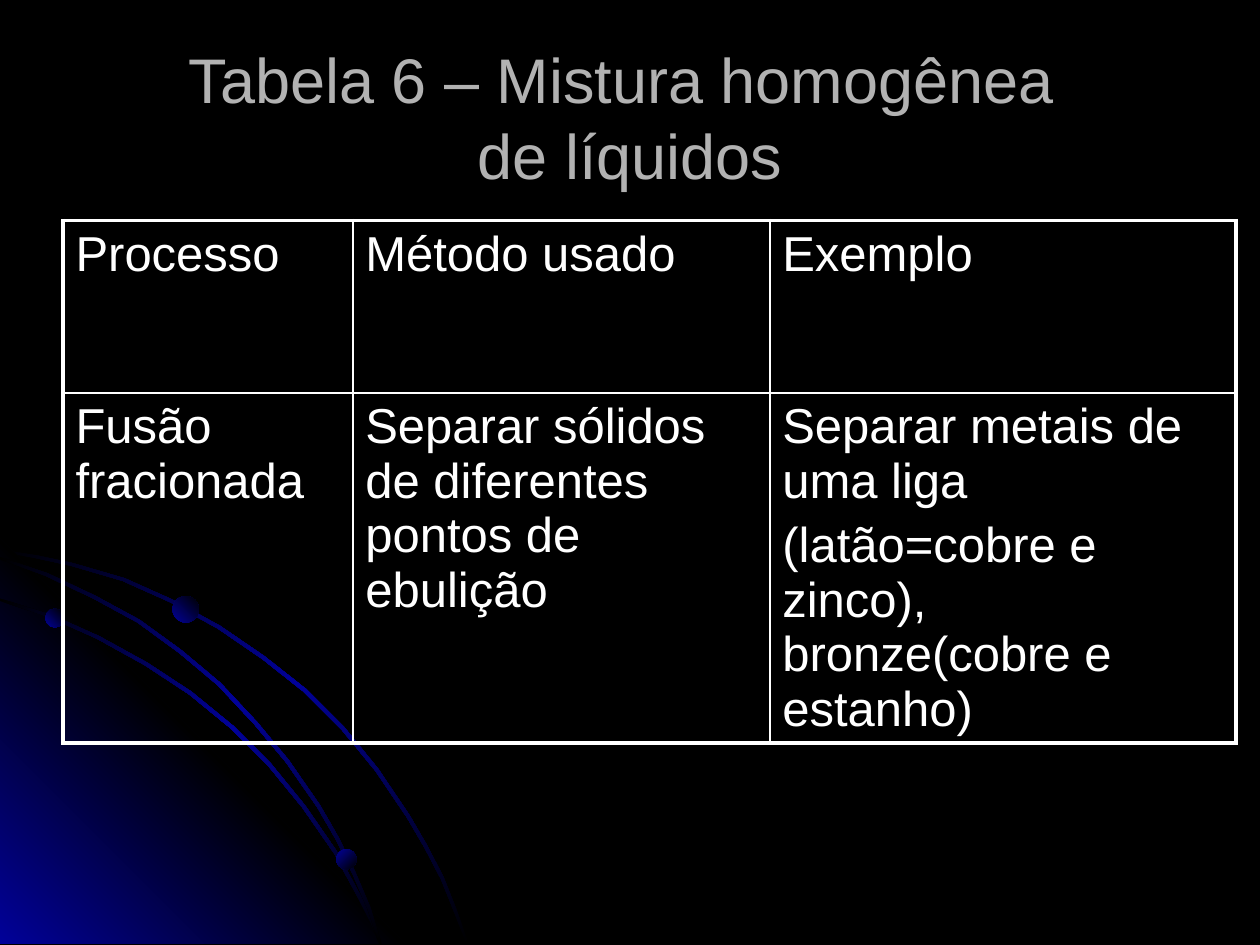
from copy import deepcopy

from lxml.etree import SubElement
from pptx import Presentation
from pptx.dml.color import RGBColor
from pptx.enum.shapes import MSO_SHAPE as Shape
from pptx.enum.text import MSO_ANCHOR as Anchor, MSO_AUTO_SIZE as AutoSize, PP_ALIGN as Align
from pptx.oxml.ns import qn
from pptx.util import Pt

FONT = "Arial"
BLACK, BLUE, WHITE, GREY = "000000", "010199", "FFFFFF", "B2B2B2"
UNIT = Pt(0.72)
BOTTOM = 749
ARCS = [
    [(0, 438), (28, 443), (56, 449), (97, 461), (135, 478), (173, 499), (208, 523),
     (241, 549), (271, 579), (298, 612), (323, 649), (337, 673), (350, 698),
     (360, 723), (370, BOTTOM)],
    [(0, 477), (39, 490), (77, 507), (115, 528), (150, 551), (183, 578), (213, 608),
     (240, 641), (265, 677), (285, 714), (294, 732), (301, BOTTOM)],
    [(0, 444), (36, 457), (74, 475), (109, 494), (142, 518), (173, 544), (202, 575),
     (227, 605), (252, 641), (267, 667), (280, 694), (292, 722), (301, BOTTOM)],
]
GLOW = [(0, 427), (322, BOTTOM), (0, BOTTOM)]
PLANETS = [(25.9, 347.8, 10.8, 45), (192.2, 485.3, 11.5, 315), (98.6, 340.6, 15.1, 45)]
COLUMNS = [165.6, 238.3, 266.4]
ROWS = [98.6, 178.6]
CELLS = [
    ["Processo", "Método usado", "Exemplo"],
    ["Fusão fracionada", "Separar sólidos de diferentes pontos de ebulição",
     "Separar metais de uma liga\n(latão=cobre e zinco), bronze(cobre e estanho)"],
]


def color(value):
    return RGBColor.from_string(value)


def format_runs(paragraph, size, value):
    for run in paragraph.runs:
        run.font.name = FONT
        run.font.size = Pt(size)
        run.font.color.rgb = color(value)


def paint_gradient(shape, colors, angle):
    shape.shadow.inherit = False
    shape.line.fill.background()
    shape.fill.gradient()
    shape.fill.gradient_angle = angle
    stops = shape.fill.gradient_stops
    if len(colors) == 3:
        first = shape.element.spPr.find(".//" + qn("a:gs"))
        first.addnext(deepcopy(first))
        stops = shape.fill.gradient_stops
    for index, (stop, value) in enumerate(zip(stops, colors)):
        stop.position = index / (len(colors) - 1)
        stop.color.rgb = color(value)


def add_outline(slide, points, colors, angle):
    builder = slide.shapes.build_freeform(*points[0], scale=UNIT)
    builder.add_line_segments(points[1:], close=True)
    paint_gradient(builder.convert_to_shape(), colors, angle)


def add_arc(slide, lower):
    upper = [(x + 2 if x else x, y - 2 if y < BOTTOM else y) for x, y in lower]
    add_outline(slide, lower + upper[::-1], [BLACK, BLUE, BLACK], 315)


def add_planet(slide, left, top, size, angle):
    planet = slide.shapes.add_shape(Shape.OVAL, Pt(left), Pt(top), Pt(size), Pt(size))
    paint_gradient(planet, [BLUE, BLACK], angle)


def set_title(slide, text):
    title = slide.shapes.title
    title.left, title.top, title.width, title.height = Pt(36), Pt(21.6), Pt(648), Pt(90)
    frame = title.text_frame
    frame.text = text
    frame.auto_size = AutoSize.NONE
    frame.vertical_anchor = Anchor.MIDDLE
    frame.paragraphs[0].alignment = Align.CENTER
    format_runs(frame.paragraphs[0], 36, GREY)


def set_borders(cell, widths):
    properties = cell._tc.get_or_add_tcPr()
    for index, (side, width) in enumerate(widths.items()):
        line = properties.makeelement(qn("a:ln" + side), {"w": str(Pt(width))})
        fill = SubElement(line, qn("a:solidFill"))
        SubElement(fill, qn("a:srgbClr"), val=WHITE)
        properties.insert(index, line)


def add_table(slide):
    frame = slide.shapes.add_table(len(ROWS), len(COLUMNS), Pt(36), Pt(126),
                                   Pt(sum(COLUMNS)), Pt(sum(ROWS)))
    table = frame.table
    table.first_row = table.horz_banding = False
    for column, width in zip(table.columns, COLUMNS):
        column.width = Pt(width)
    for row, height in zip(table.rows, ROWS):
        row.height = Pt(height)
    for r, texts in enumerate(CELLS):
        for c, text in enumerate(texts):
            cell = table.cell(r, c)
            cell.fill.background()
            cell.text_frame.text = text
            for paragraph in cell.text_frame.paragraphs:
                paragraph.space_before = Pt(5.6)
                format_runs(paragraph, 28, WHITE)
            outer = {"L": c == 0, "R": c == len(COLUMNS) - 1,
                     "T": r == 0, "B": r == len(ROWS) - 1}
            set_borders(cell, {side: 2.25 if edge else 1 for side, edge in outer.items()})


def main():
    presentation = Presentation()
    presentation.slide_width, presentation.slide_height = Pt(720), Pt(540)
    slide = presentation.slides.add_slide(presentation.slide_layouts[5])
    slide.background.fill.solid()
    slide.background.fill.fore_color.rgb = color(BLACK)
    add_arc(slide, ARCS[0])
    add_outline(slide, GLOW, [BLUE, BLACK, BLUE], 45)
    for arc in ARCS[1:]:
        add_arc(slide, arc)
    for planet in PLANETS:
        add_planet(slide, *planet)
    set_title(slide, "Tabela 6 – Mistura homogênea \vde líquidos")
    add_table(slide)
    presentation.save("out.pptx")


if __name__ == "__main__":
    main()
